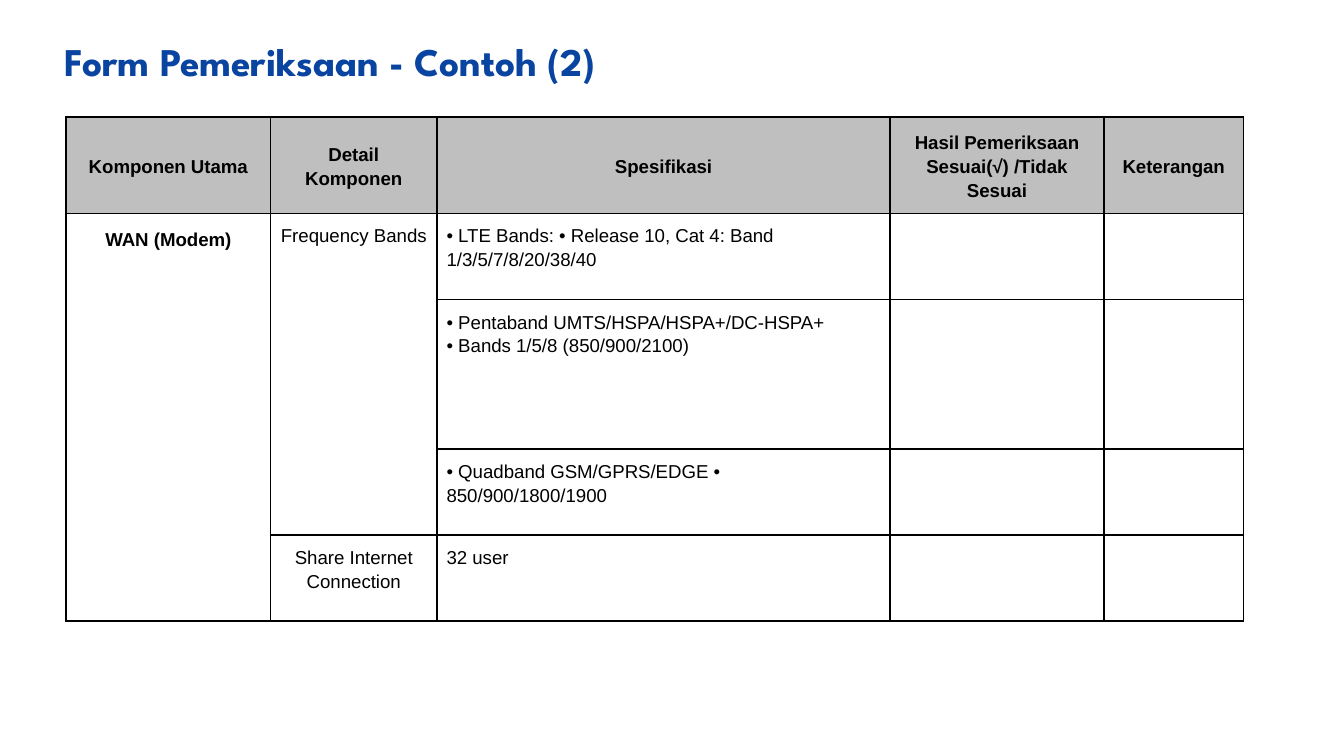
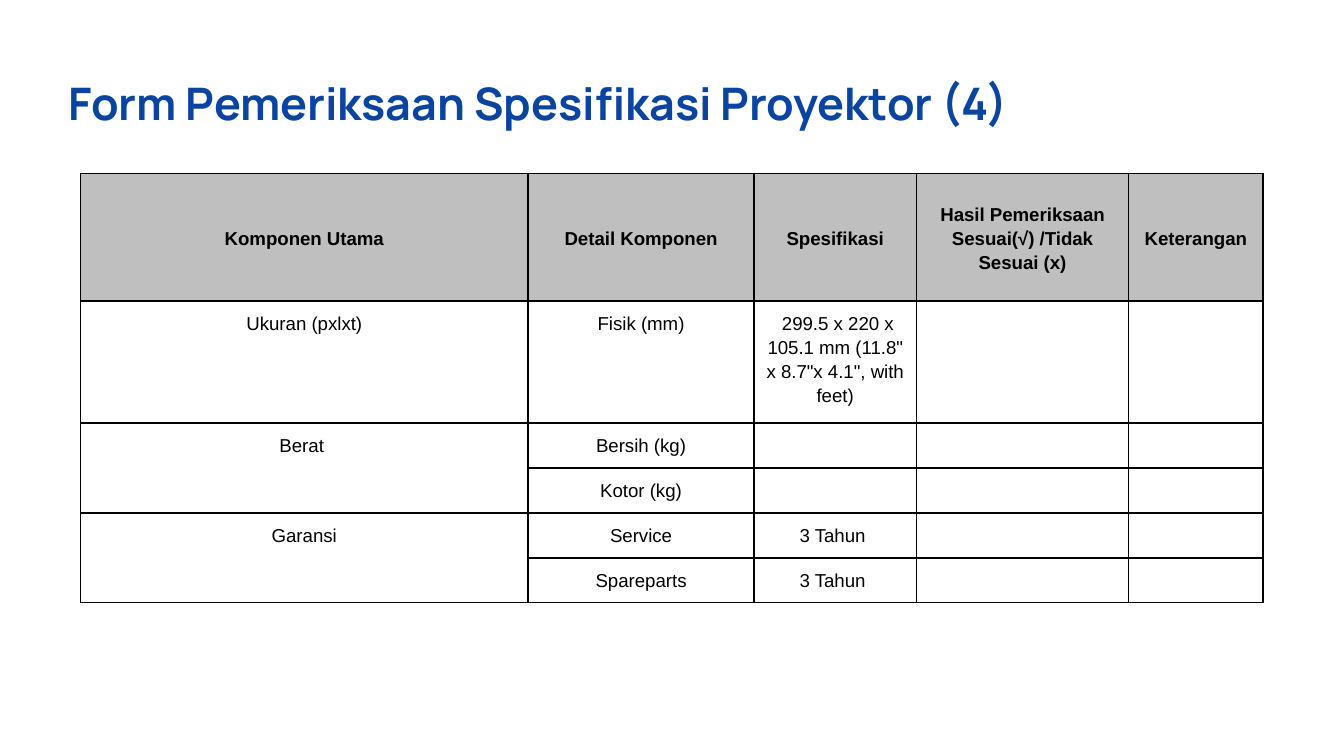
from lxml import etree
from pptx import Presentation
from pptx.dml.color import RGBColor
from pptx.enum import text as t
from pptx.oxml import ns
from pptx.util import Cm, Pt

BLUE = RGBColor(0x09, 0x44, 0xA1)
BLACK = RGBColor(0, 0, 0)
GREY = RGBColor(0xBF, 0xBF, 0xBF)
BODY_FONT, BODY_SIZE = "Arial", 10
LEFT, CENTER = t.PP_ALIGN.LEFT, t.PP_ALIGN.CENTER
TOP, MIDDLE = t.MSO_ANCHOR.TOP, t.MSO_ANCHOR.MIDDLE
TITLE_INSET, CELL_INSET = Cm(0.25), Cm(0.18)
ABOVE = None  # cell joined to the one above it


def put_text(tf, txt, font=BODY_FONT, size=BODY_SIZE, color=BLACK,
             bold=False, align=LEFT, spacing=None):
    """Write one paragraph for each line of txt."""
    for i, line in enumerate(txt.split("\n")):
        p = tf.add_paragraph() if i else tf.paragraphs[0]
        p.alignment = align
        p.line_spacing = spacing
        if not line:  # an empty cell keeps the row at text height
            etree.SubElement(p._p, ns.qn("a:endParaRPr"), sz=str(size * 100))
            continue
        r = p.add_run()
        r.text = line
        r.font.name, r.font.size, r.font.bold = font, Pt(size), bold
        r.font.color.rgb = color


def add_title(s, txt, box, font, size):
    sp = s.shapes.title
    sp.left, sp.top, sp.width, sp.height = (Cm(v) for v in box)
    tf = sp.text_frame
    tf.word_wrap = True
    tf.auto_size = t.MSO_AUTO_SIZE.SHAPE_TO_FIT_TEXT
    tf.vertical_anchor = TOP
    tf.margin_left = tf.margin_right = TITLE_INSET
    tf.margin_top = tf.margin_bottom = TITLE_INSET
    put_text(tf, txt, font=font, size=size, color=BLUE, bold=True)


def add_borders(cell):
    tc_pr = cell._tc.get_or_add_tcPr()
    for side in ("lnL", "lnR", "lnT", "lnB"):
        ln = etree.SubElement(tc_pr, ns.qn("a:" + side), w=str(Pt(1)))
        fill = etree.SubElement(ln, ns.qn("a:solidFill"))
        etree.SubElement(fill, ns.qn("a:srgbClr"), val=str(BLACK))


def format_cell(cell, header):
    add_borders(cell)
    cell.margin_left = cell.margin_right = CELL_INSET
    cell.margin_top = cell.margin_bottom = CELL_INSET
    cell.vertical_anchor = MIDDLE if header else TOP
    if header:
        cell.fill.solid()
        cell.fill.fore_color.rgb = GREY
    else:
        cell.fill.background()


def add_form(s, left, top, widths, heights, rows, left_cols=(), bold_cols=()):
    """Inspection form: grey header row, joined cells below it."""
    table = s.shapes.add_table(len(rows), len(widths), Cm(left), Cm(top),
                               Cm(sum(widths)), Cm(sum(heights))).table
    table.first_row = table.horz_banding = False
    for col, width in zip(table.columns, widths):
        col.width = Cm(width)
    for row, height in zip(table.rows, heights):
        row.height = Cm(height)

    for i, row in enumerate(rows):
        for j, txt in enumerate(row):
            cell, header = table.cell(i, j), i == 0
            format_cell(cell, header)
            if txt is ABOVE:
                continue
            last = i
            while last + 1 < len(rows) and rows[last + 1][j] is ABOVE:
                last += 1
            if last > i:
                cell.merge(table.cell(last, j))
            put_text(cell.text_frame, txt, bold=header or j in bold_cols,
                     align=LEFT if j in left_cols and not header else CENTER,
                     spacing=1.15)
    return table


def modem_slide(s):
    add_title(s, "Form Pemeriksaan - Contoh (2)", (0.97, 0.46, 19.94, 1.42),
              "League Spartan", 21)
    table = add_form(
        s, 1.25, 2.21,
        widths=(3.86, 3.15, 8.56, 4.04, 2.64),
        heights=(1.57, 1.63, 2.82, 1.63, 1.63),
        rows=[
            ("Komponen Utama", "Detail Komponen", "Spesifikasi",
             "Hasil Pemeriksaan Sesuai(√) /Tidak Sesuai", "Keterangan"),
            ("WAN (Modem)", "Frequency Bands",
             "• LTE Bands: • Release 10, Cat 4: Band 1/3/5/7/8/20/38/40",
             "", ""),
            (ABOVE, ABOVE, "• Pentaband UMTS/HSPA/HSPA+/DC-HSPA+\n"
             "• Bands 1/5/8 (850/900/2100)", "", ""),
            (ABOVE, ABOVE, "• Quadband GSM/GPRS/EDGE • 850/900/1800/1900",
             "", ""),
            (ABOVE, "Share Internet Connection", "32 user", "", ""),
        ],
        left_cols=(2,), bold_cols=(0,))
    modem = table.cell(1, 0)
    modem.margin_top = modem.margin_bottom = TITLE_INSET


def projector_slide(s):
    add_title(s, "Form Pemeriksaan Spesifikasi Proyektor (4)",
              (1.04, 1.19, 21.13, 1.55), "Manrope", 24)
    add_form(
        s, 1.52, 3.28,
        widths=(8.46, 4.27, 3.07, 4.01, 2.54),
        heights=(2.41,) + (0.79,) * 5,
        rows=[
            ("Komponen Utama", "Detail Komponen", "Spesifikasi",
             "Hasil Pemeriksaan Sesuai(√) /Tidak Sesuai (x)", "Keterangan"),
            ("Ukuran (pxlxt)", "Fisik (mm)",
             ' 299.5 x 220 x 105.1 mm (11.8" x 8.7"x 4.1", with feet)',
             "", ""),
            ("Berat ", "Bersih (kg)", "", "", ""),
            (ABOVE, "Kotor (kg)", "", "", ""),
            ("Garansi", "Service", "3 Tahun ", "", ""),
            (ABOVE, "Spareparts", "3 Tahun ", "", ""),
        ])


def main():
    prs = Presentation()
    prs.slide_width, prs.slide_height = Cm(25.4), Cm(14.29)
    title_only = prs.slide_layouts[5]
    for build in (modem_slide, projector_slide):
        build(prs.slides.add_slide(title_only))
    prs.save("out.pptx")


if __name__ == "__main__":
    main()
